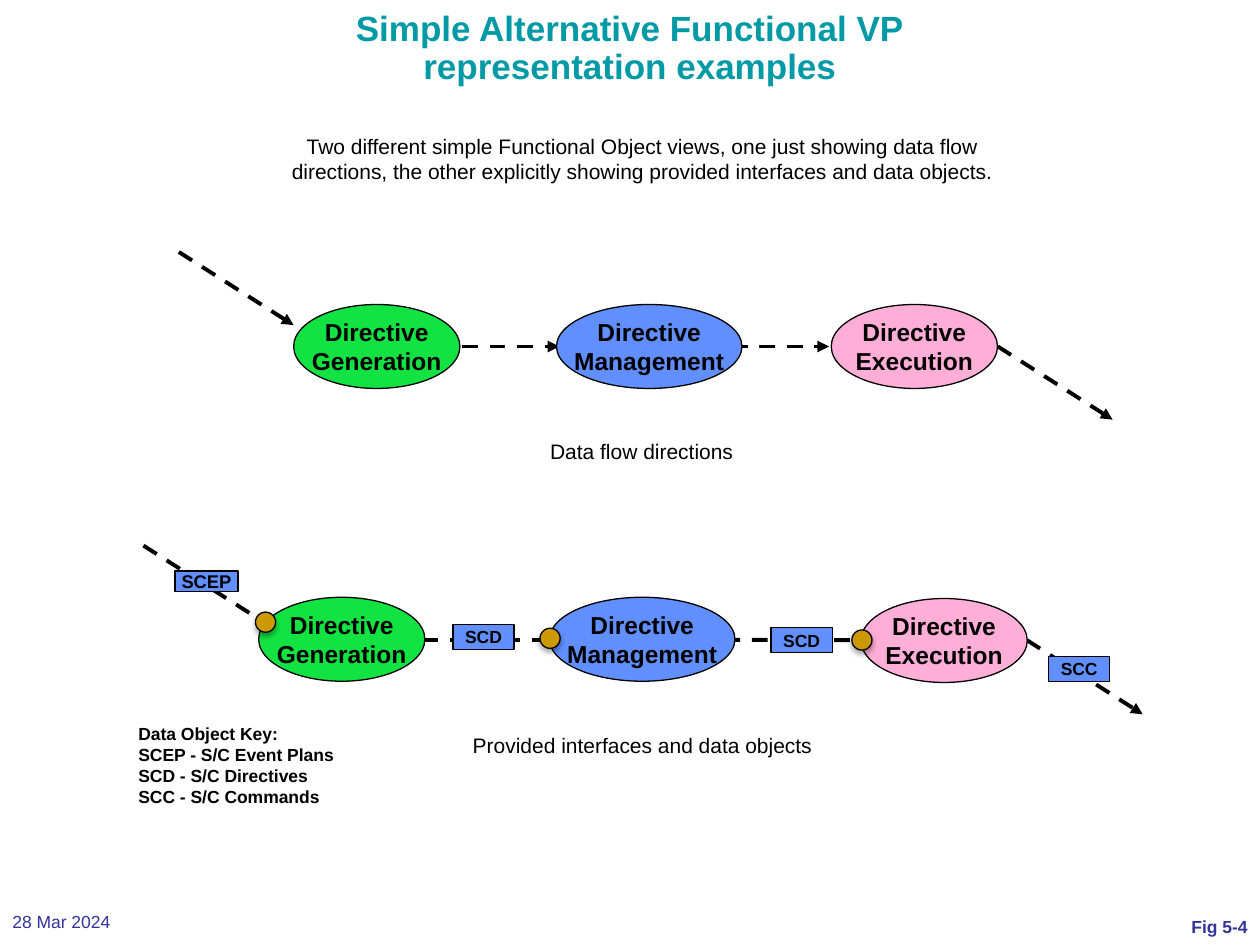
import pptx
import pptx.dml.color
import pptx.enum.dml
import pptx.enum.shapes
import pptx.enum.text
import pptx.oxml
import pptx.oxml.ns
import pptx.util
from dataclasses import dataclass

Pt = pptx.util.Pt
ALIGN = pptx.enum.text.PP_ALIGN
ANCHOR = pptx.enum.text.MSO_ANCHOR
SHAPE = pptx.enum.shapes.MSO_SHAPE


@dataclass(frozen=True)
class Theme:
    font: str = "Arial"
    ink: str = "000000"
    title: str = "0099A6"
    footer: str = "333399"
    generation: str = "12E343"
    management: str = "618FFD"
    execution: str = "FFAED7"
    data_object: str = "618FFD"
    interface: str = "CC9900"
    title_size: float = 20
    function_size: float = 14
    body_size: float = 12
    small_size: float = 10
    outline: float = 0.75
    flow: float = 2.25


THEME = Theme()
FUNCTION_HEIGHT = 48
FUNCTIONS = {  # name: (width, fill)
    "Generation": (95, THEME.generation),
    "Management": (106, THEME.management),
    "Execution": (95, THEME.execution),
}


def rgb(value):
    return pptx.dml.color.RGBColor.from_string(value)


def write(shape, lines, size, color=THEME.ink, bold=False, align=ALIGN.CENTER,
          anchor=ANCHOR.MIDDLE, wrap=False, spacing=None):
    frame = shape.text_frame
    frame.text = "\n".join(lines)
    frame.word_wrap = wrap
    frame.vertical_anchor = anchor
    for paragraph in frame.paragraphs:
        paragraph.alignment = align
        paragraph.line_spacing = spacing
        for run in paragraph.runs:
            run.font.name = THEME.font
            run.font.size = Pt(size)
            run.font.bold = bold
            run.font.color.rgb = rgb(color)


def add_text(slide, box, lines, size, **style):
    shape = slide.shapes.add_textbox(*map(Pt, box))
    write(shape, lines, size, **style)


def add_filled(slide, kind, box, fill):
    """Add a preset shape with the thin black outline."""
    shape = slide.shapes.add_shape(kind, *map(Pt, box))
    shape.shadow.inherit = False
    shape.fill.solid()
    shape.fill.fore_color.rgb = rgb(fill)
    shape.line.color.rgb = rgb(THEME.ink)
    shape.line.width = Pt(THEME.outline)
    return shape


def add_function(slide, name, left, top):
    width, fill = FUNCTIONS[name]
    shape = add_filled(slide, SHAPE.OVAL, (left, top, width, FUNCTION_HEIGHT), fill)
    write(shape, ["Directive", name], THEME.function_size, bold=True)


def add_data_object(slide, label, box, size=THEME.small_size):
    shape = add_filled(slide, SHAPE.RECTANGLE, box, THEME.data_object)
    write(shape, [label], size, bold=True)


def add_interface(slide, left, top):
    """Add the small round interface marker with its soft shadow."""
    shape = add_filled(slide, SHAPE.OVAL, (left, top, 11.5, 11.5), THEME.interface)
    effects = shape._element.spPr.find(pptx.oxml.ns.qn("a:effectLst"))
    effects.append(pptx.oxml.parse_xml(
        f'<a:outerShdw {pptx.oxml.ns.nsdecls("a")} blurRad="{Pt(3.1)}" dist="{Pt(1.8)}" '
        f'dir="5400000" rotWithShape="0"><a:srgbClr val="{THEME.ink}">'
        '<a:alpha val="35000"/></a:srgbClr></a:outerShdw>'))


def add_flow(slide, start, end, arrow=True):
    connector = slide.shapes.add_connector(
        pptx.enum.shapes.MSO_CONNECTOR.STRAIGHT, *map(Pt, start + end))
    connector.line.color.rgb = rgb(THEME.ink)
    connector.line.width = Pt(THEME.flow)
    connector.line.dash_style = pptx.enum.dml.MSO_LINE.DASH
    if arrow:
        line = connector.line._get_or_add_ln()
        line.append(line.makeelement(pptx.oxml.ns.qn("a:tailEnd"), {"type": "triangle"}))
    properties = connector._element.spPr
    properties.append(properties.makeelement(pptx.oxml.ns.qn("a:effectLst"), {}))


def add_data_flow_view(slide):
    for start, end in [((102.2, 144), (167.8, 185.8)), ((264.2, 198), (319.7, 198)),
                       ((418.3, 198), (473.8, 198)), ((570.2, 198), (635.8, 239.8))]:
        add_flow(slide, start, end)
    for name, left in zip(FUNCTIONS, (167.8, 318, 475)):
        add_function(slide, name, left, 174)
    add_text(slide, (306.7, 247, 120, 21.6), ["Data flow directions"],
             THEME.body_size, anchor=ANCHOR.TOP)


def add_interface_view(slide):
    for start, end in [((82, 311.8), (147.6, 353.5)), ((241.2, 365.8), (315.4, 365.8)),
                       ((414, 365.6), (491.8, 365.8))]:
        add_flow(slide, start, end, arrow=False)
    add_flow(slide, (586.8, 365.8), (653, 408.2))
    for name, left, top in zip(FUNCTIONS, (147.8, 314, 492), (341.3, 341.3, 342)):
        add_function(slide, name, left, top)
    add_data_object(slide, "SCEP", (100, 326.2, 36, 12), size=10.5)
    for label, left, top in [("SCD", 258.8, 356.8), ("SCD", 440.6, 358.7),
                             ("SCC", 599.2, 375.1)]:
        add_data_object(slide, label, (left, top, 35, 14.4))
    for left, top in [(146, 349.8), (308.6, 359), (486.8, 360)]:
        add_interface(slide, left, top)
    add_text(slide, (262.8, 415, 208.8, 21.6), ["Provided interfaces and data objects"],
             THEME.body_size, anchor=ANCHOR.TOP)
    add_text(slide, (72, 409.7, 127.4, 80),
             ["Data Object Key:", "SCEP - S/C Event Plans",
              "SCD - S/C Directives", "SCC - S/C Commands"],
             THEME.small_size, bold=True, align=ALIGN.LEFT, anchor=ANCHOR.TOP)


def main():
    presentation = pptx.Presentation()
    presentation.slide_width, presentation.slide_height = Pt(720), Pt(540)
    slide = presentation.slides.add_slide(presentation.slide_layouts[6])

    add_text(slide, (194.4, 2.9, 331.2, 28.8),
             ["Simple Alternative Functional VP", "representation examples"],
             THEME.title_size, color=THEME.title, bold=True,
             anchor=ANCHOR.TOP, wrap=True, spacing=0.9)
    add_text(slide, (150.5, 72.7, 433.4, 36),
             ["Two different simple Functional Object views, one just showing data flow "
              "directions, the other explicitly showing provided interfaces and data objects."],
             THEME.body_size, anchor=ANCHOR.TOP, wrap=True)
    add_data_flow_view(slide)
    add_interface_view(slide)
    add_text(slide, (0, 516.2, 136, 20.9), ["28 Mar 2024"], THEME.small_size,
             color=THEME.footer, align=ALIGN.LEFT)
    add_text(slide, (584, 519.1, 136, 20.9), ["Fig 5-4"], THEME.small_size,
             color=THEME.footer, bold=True, align=ALIGN.RIGHT)

    presentation.save("out.pptx")


if __name__ == "__main__":
    main()
